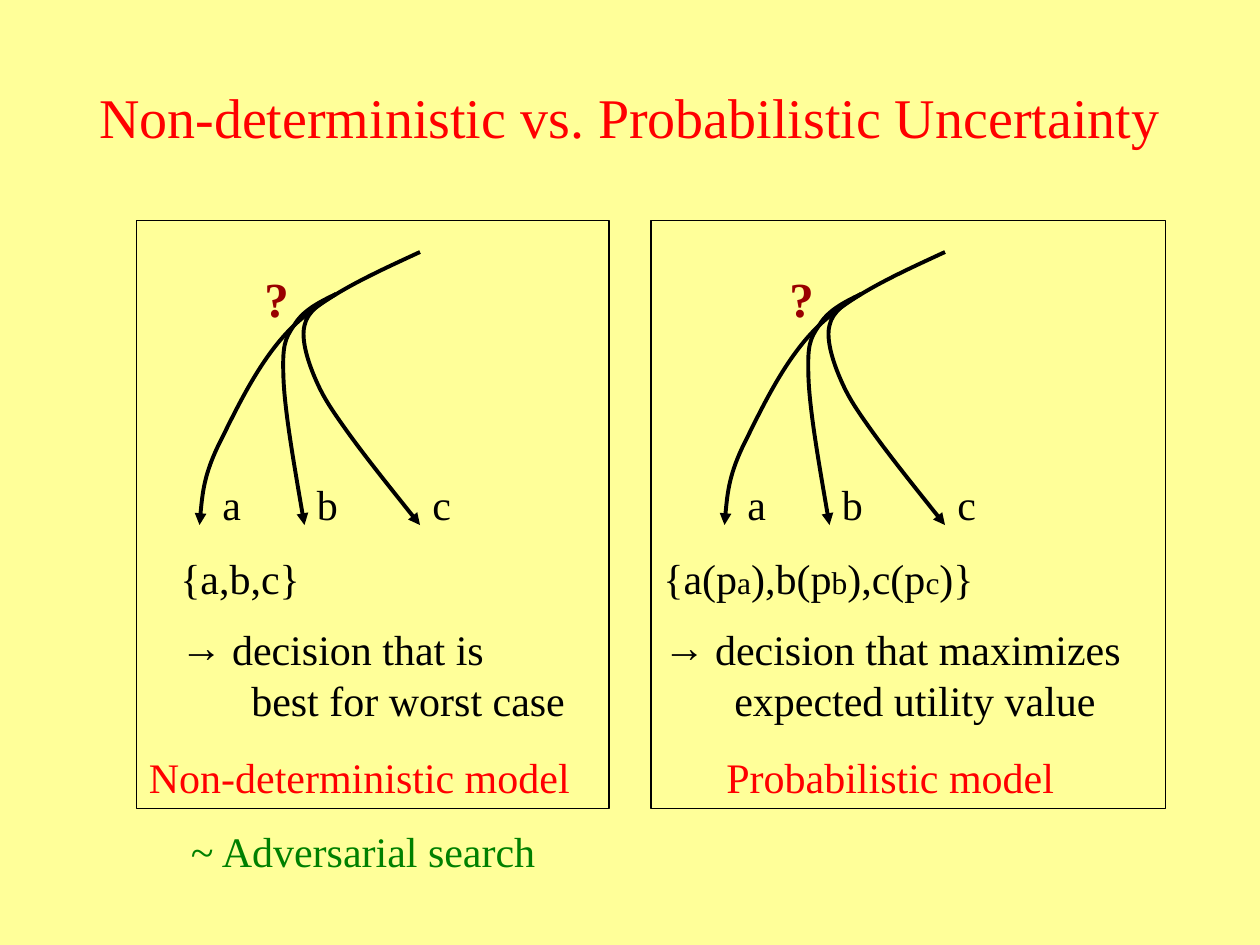
from lxml.etree import SubElement
from pptx import Presentation
from pptx.dml.color import RGBColor
from pptx.enum.shapes import MSO_SHAPE as SHAPE
from pptx.enum.text import MSO_ANCHOR as ANCHOR, MSO_AUTO_SIZE as AUTO_SIZE, PP_ALIGN as ALIGN
from pptx.oxml.ns import qn
from pptx.util import Pt

FONT = "Times New Roman"
BLACK, RED, DARK_RED, GREEN = "000000", "FF0000", "990000", "008000"


def color(value):
    return RGBColor.from_string(value)


def add_label(left, top, width, height, lines, ink=BLACK, size=24, bold=False):
    frame = slide.shapes.add_textbox(Pt(left), Pt(top), Pt(width), Pt(height)).text_frame
    frame.word_wrap = True
    frame.auto_size = AUTO_SIZE.SHAPE_TO_FIT_TEXT
    frame.text = "\n".join(lines)
    for line in frame.paragraphs:
        line.font.name = FONT
        line.font.size = Pt(size)
        line.font.bold = bold
        line.font.color.rgb = color(ink)
    return frame


prs = Presentation()
prs.slide_width, prs.slide_height = Pt(720), Pt(540)
slide = prs.slides.add_slide(prs.slide_layouts[5])
slide.background.fill.solid()
slide.background.fill.fore_color.rgb = color("FFFF99")

title = slide.shapes.title
title.left, title.top, title.width, title.height = Pt(36), Pt(21.6), Pt(648), Pt(90)
title.text_frame.text = "Non-deterministic vs. Probabilistic Uncertainty"
title.text_frame.vertical_anchor = ANCHOR.MIDDLE
title.text_frame.auto_size = AUTO_SIZE.NONE
heading = title.text_frame.paragraphs[0]
heading.alignment = ALIGN.CENTER
heading.font.name = FONT
heading.font.size = Pt(32)
heading.font.color.rgb = color(RED)

branches = [
    [(240, 144), (213.8, 156.2), (187, 168), (168, 186), (149, 204),
     (135.5, 233), (126, 252), (116.6, 270.7), (115.2, 285.5), (114, 300)],
    [(192, 168), (182, 172.8), (172.8, 177.6), (168, 186), (162.7, 193.7),
     (161.3, 197.3), (162, 216), (162.7, 234.7), (168.5, 268), (174, 300)],
    [(192, 168), (184, 172.8), (175.7, 177.6), (174, 186), (172, 193.7),
     (175.7, 206), (180, 216), (184.3, 226), (188, 232), (198, 246),
     (208, 260), (224, 280), (240, 300)],
]
outcomes = [("a", 120, 46), ("b", 174, 46), ("c", 240, 28)]

models = [
    {"shift": 0, "frame": (78, 270), "name": ("Non-deterministic model", 78, 294),
     "summary": (96, 252), "set": ["{a,b,c}"],
     "decision": ["decision that is", "best for worst case"]},
    {"shift": 300, "frame": (372, 294), "name": ("Probabilistic model", 408, 234),
     "summary": (372, 312), "set": ["{a(p", "a", "),b(p", "b", "),c(p", "c", ")}"],
     "decision": ["decision that maximizes", "expected utility value"]},
]

for model in models:
    shift = model["shift"]
    for points in branches:
        (start_x, start_y), *controls = [(Pt(x + shift), Pt(y)) for x, y in points]
        builder = slide.shapes.build_freeform(start_x, start_y)
        builder.add_line_segments(controls, close=False)
        branch = builder.convert_to_shape()
        branch.shadow.inherit = False
        branch.fill.background()
        branch.line.color.rgb = color(BLACK)
        branch.line.width = Pt(2.25)
        SubElement(branch.line._get_or_add_ln(), qn("a:tailEnd"), type="triangle")
        outline = next(branch._element.iter(qn("a:path")))
        segments = outline.findall(qn("a:lnTo"))
        for first in range(0, len(segments), 3):
            curve = SubElement(outline, qn("a:cubicBezTo"))
            for segment in segments[first:first + 3]:
                curve.append(segment[0])
                outline.remove(segment)

    add_label(144 + shift, 150, 30, 41, ["?"], DARK_RED, 28, True)
    for outcome, left, width in outcomes:
        add_label(left + shift, 270, width, 36, [outcome])

    left, width = model["summary"]
    summary = add_label(left, 312, width, 109, ["", *model["decision"]])
    outcome_set, decision, continuation = summary.paragraphs
    for index, part in enumerate(model["set"]):
        run = outcome_set.add_run()
        run.text = part
        if index % 2:
            run.font.size = Pt(18)
    decision.space_before = Pt(12)
    bullet = decision._p.get_or_add_pPr()
    bullet.set("marL", str(Pt(29.5)))
    bullet.set("indent", str(-Pt(29.5)))
    bullet_font = SubElement(bullet, qn("a:buFont"), typeface=FONT)
    bullet_sign = SubElement(bullet, qn("a:buChar"), char="→")
    for child in (bullet_font, bullet_sign):
        bullet.find(qn("a:defRPr")).addprevious(child)
    continuation._p.get_or_add_pPr().set("marL", str(Pt(40.5)))

    name, left, width = model["name"]
    add_label(left, 426, width, 36, [name], RED)

    left, width = model["frame"]
    border = slide.shapes.add_shape(SHAPE.RECTANGLE, Pt(left), Pt(126), Pt(width), Pt(336))
    border.shadow.inherit = False
    border.fill.background()
    border.line.color.rgb = color(BLACK)
    border.line.width = Pt(0.75)

add_label(102, 468, 213, 36, ["~ Adversarial search"], GREEN).word_wrap = False

prs.save("out.pptx")
